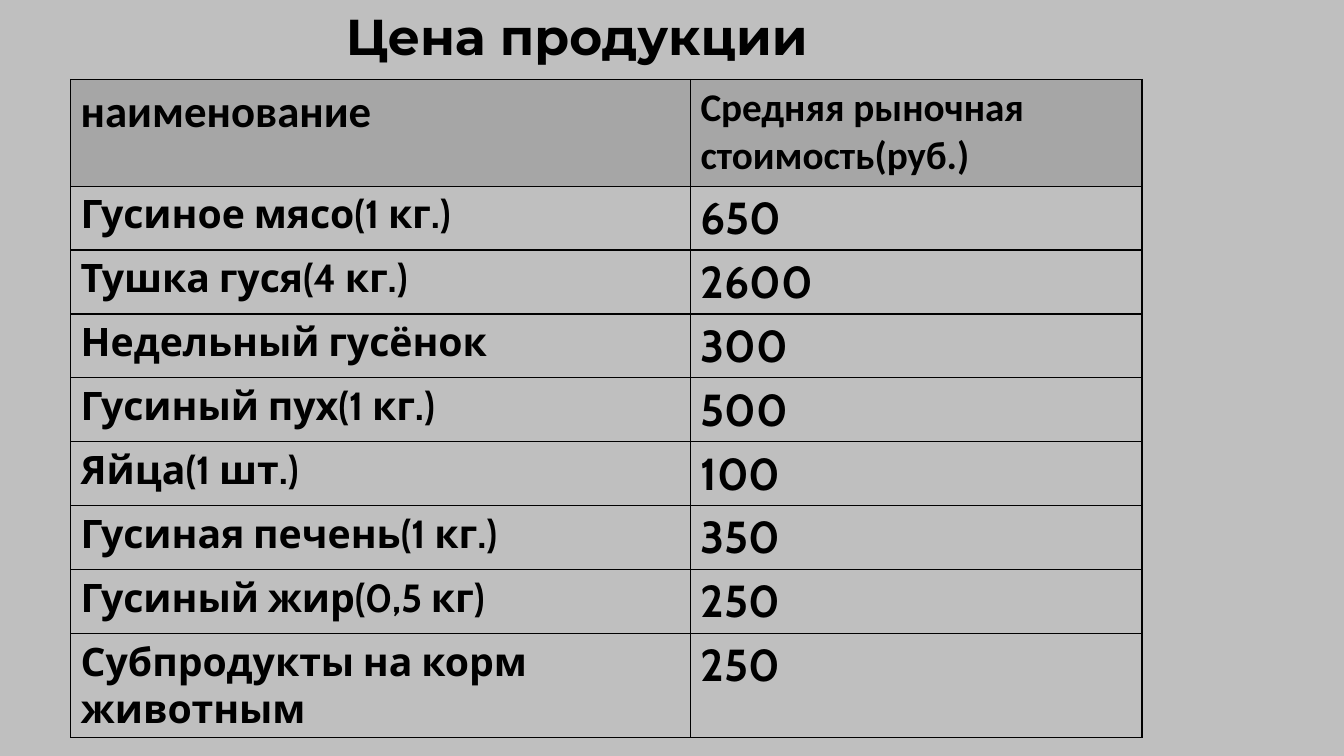
from lxml import etree
from pptx import Presentation
from pptx.dml.color import RGBColor
from pptx.enum import text
from pptx.oxml import ns
from pptx.util import Cm, Pt

INK, HEAD, BACK = "000000", "A6A6A6", "BFBFBF"
TITLE = "Цена продукции"
HEADS = ["наименование", "Средняя рыночная стоимость(руб.)"]
PRICES = [
    ("Гусиное мясо(1 кг.)", 650),
    ("Тушка гуся(4 кг.)", 2600),
    ("Недельный гусёнок", 300),
    ("Гусиный пух(1 кг.)", 500),
    ("Яйца(1 шт.)", 100),
    ("Гусиная печень(1 кг.)", 350),
    ("Гусиный жир(0,5 кг)", 250),
    ("Субпродукты на корм животным", 250),
]


def paint(color, value):
    color.rgb = RGBColor.from_string(value)


def write(frame, words, font, size):
    frame.text = words
    run = frame.paragraphs[0].runs[0]
    style = {"name": font, "size": Pt(size), "bold": True}
    for key, value in style.items():
        setattr(run.font, key, value)
    paint(run.font.color, INK)


def border(cell):
    props = cell._tc.get_or_add_tcPr()
    for side in ("a:lnL", "a:lnR", "a:lnT", "a:lnB"):
        line = etree.SubElement(props, ns.qn(side), w=str(Pt(1)))
        fill = etree.SubElement(line, ns.qn("a:solidFill"))
        etree.SubElement(fill, ns.qn("a:srgbClr"), val=INK)


def put(cell, words, font, size, fill=None):
    """Fill one table cell; without a fill colour it stays clear."""
    write(cell.text_frame, words, font, size)
    border(cell)
    if fill:
        cell.fill.solid()
        paint(cell.fill.fore_color, fill)
    else:
        cell.fill.background()


def head(slide):
    title = slide.shapes.title
    place = {"left": Cm(8.46), "top": Cm(0), "width": Cm(12.55), "height": Cm(1.8)}
    for key, value in place.items():
        setattr(title, key, value)
    frame = title.text_frame
    write(frame, TITLE, "Montserrat", 36)
    frame.paragraphs[0].alignment = text.PP_ALIGN.LEFT
    form = {
        "word_wrap": True,
        "vertical_anchor": text.MSO_ANCHOR.TOP,
        "auto_size": text.MSO_AUTO_SIZE.SHAPE_TO_FIT_TEXT,
    }
    for key, value in form.items():
        setattr(frame, key, value)


def grid(slide):
    count = len(PRICES) + 1
    shape = slide.shapes.add_table(count, 2, Cm(1.78), Cm(2), Cm(27), Cm(15.25))
    table = shape.table
    table.first_row = table.horz_banding = False
    for col, width in zip(table.columns, (15.62, 11.38)):
        col.width = Cm(width)
    for i, row in enumerate(table.rows):
        row.height = Cm(1.57 if i else 2.69)
    for i, (words, size) in enumerate(zip(HEADS, (32, 28))):
        put(table.cell(0, i), words, "Calibri", size, HEAD)
    for i, (name, price) in enumerate(PRICES, 1):
        put(table.cell(i, 0), name, "Cabin", 28)
        put(table.cell(i, 1), str(price), "Cabin", 32)


def main():
    deck = Presentation()
    deck.slide_width, deck.slide_height = Cm(33.87), Cm(19.05)
    slide = deck.slides.add_slide(deck.slide_layouts[5])
    fill = slide.background.fill
    fill.solid()
    paint(fill.fore_color, BACK)
    grid(slide)
    head(slide)
    deck.save("out.pptx")


if __name__ == "__main__":
    main()
